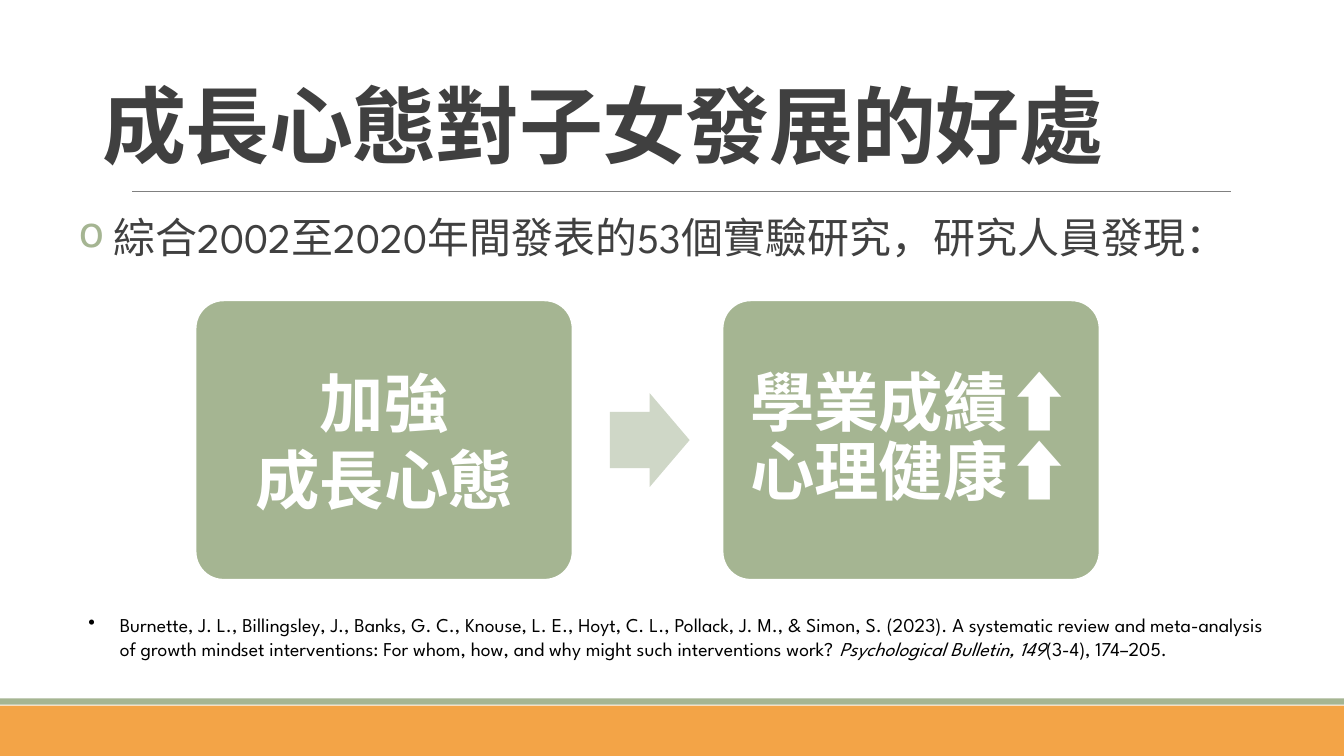
from dataclasses import dataclass

from lxml.etree import SubElement
from pptx import Presentation
from pptx.dml.color import RGBColor
from pptx.enum.shapes import MSO_CONNECTOR, MSO_SHAPE
from pptx.enum.text import MSO_ANCHOR, PP_ALIGN
from pptx.oxml.ns import qn
from pptx.util import Cm, Pt


@dataclass(frozen=True)
class Theme:
    cjk: str = "Noto Sans CJK SC"
    latin: str = "League Spartan"
    ink: str = "404040"
    black: str = "000000"
    white: str = "FFFFFF"
    sage: str = "A5B592"
    pale: str = "CFD7C7"
    amber: str = "F3A447"
    gray: str = "808080"
    title: int = 60
    card: int = 46
    body: int = 30
    cite: int = 14


def hue(code):
    return RGBColor.from_string(code)


class Painter:
    def __init__(self, slide, theme):
        self.slide = slide
        self.theme = theme

    def shape(self, kind, box, fill, edge=None, bends=()):
        item = self.slide.shapes.add_shape(kind, *map(Cm, box))
        item.shadow.inherit = False
        item.fill.solid()
        item.fill.fore_color.rgb = hue(fill)
        if edge:
            item.line.color.rgb = hue(edge)
            item.line.width = Pt(1.25)
        else:
            item.line.fill.background()
        for index, bend in enumerate(bends):
            item.adjustments[index] = bend
        return item

    def rule(self, left, right, top):
        line = self.slide.shapes.add_connector(
            MSO_CONNECTOR.STRAIGHT, Cm(left), Cm(top), Cm(right), Cm(top))
        line.line.color.rgb = hue(self.theme.gray)
        line.line.width = Pt(0.5)
        SubElement(line._element.spPr, qn("a:effectLst"))

    def style(self, run, size, color, font, bold=False):
        run.font.size = Pt(size)
        run.font.bold = bold
        run.font.color.rgb = hue(color)
        run.font.name = font
        props = run._r.get_or_add_rPr()
        SubElement(props, qn("a:ea"), typeface=self.theme.cjk)

    def bullet(self, para, mark, color, indent):
        props = para._p.get_or_add_pPr()
        props.set("marL", str(Cm(indent)))
        props.set("indent", str(-Cm(indent)))
        tint = SubElement(props, qn("a:buClr"))
        SubElement(tint, qn("a:srgbClr"), val=color)
        SubElement(props, qn("a:buChar"), char=mark)

    def text(self, box, parts, size, color, bold=False):
        frame = self.slide.shapes.add_textbox(*map(Cm, box)).text_frame
        frame.word_wrap = True
        para = frame.paragraphs[0]
        for words, font in parts:
            run = para.add_run()
            run.text = words
            self.style(run, size, color, font, bold)
        return frame

    def card(self, left, words, pitch):
        theme = self.theme
        item = self.shape(MSO_SHAPE.ROUNDED_RECTANGLE, (left, 7.57, 9.5, 7.04),
                          theme.sage, theme.white, (0.1,))
        frame = item.text_frame
        frame.word_wrap = True
        frame.vertical_anchor = MSO_ANCHOR.MIDDLE
        frame.margin_left = frame.margin_right = Cm(0.46)
        frame.margin_top = frame.margin_bottom = Cm(0.46)
        frame.text = words
        for para in frame.paragraphs:
            para.alignment = PP_ALIGN.CENTER
            para.line_spacing = pitch
            for run in para.runs:
                self.style(run, theme.card, theme.white, theme.cjk, True)


def main():
    deck = Presentation()
    deck.slide_width, deck.slide_height = Cm(33.87), Cm(19.05)
    theme = Theme()
    pen = Painter(deck.slides.add_slide(deck.slide_layouts[6]), theme)

    pen.shape(MSO_SHAPE.RECTANGLE, (0, 17.78, 33.87, 1.27), theme.amber)
    pen.shape(MSO_SHAPE.RECTANGLE, (0, 17.6, 33.87, 0.16), theme.sage)
    pen.rule(3.33, 31.01, 4.83)

    title = pen.text((2.34, 0.84, 29.21, 3.68),
                     [("成長心態對子女發展的好處", theme.cjk)],
                     theme.title, theme.ink, True)
    title.vertical_anchor = MSO_ANCHOR.BOTTOM
    title.paragraphs[0].line_spacing = 0.85
    title.paragraphs[0].runs[0]._r.get_or_add_rPr().set("spc", "-50")

    body = pen.text((1.98, 5.36, 30.18, 1.8),
                    [(" ", theme.cjk),
                     ("綜合2002至2020年間發表的53個實驗研究，研究人員發現：", theme.latin)],
                    theme.body, theme.ink)
    body.margin_left = body.margin_right = 0
    pen.bullet(body.paragraphs[0], "o", theme.sage, 0.25)
    body.paragraphs[0].line_spacing = 0.9

    cite = pen.text((1.98, 15.32, 30.51, 2.06),
                    [("Burnette, J. L., Billingsley, J., Banks, G. C., Knouse, L. E., "
                      "Hoyt, C. L., Pollack, J. M., & Simon, S. (2023). A systematic "
                      "review and meta-analysis of growth mindset interventions: For "
                      "whom, how, and why might such interventions work? ", theme.latin),
                     ("Psychological Bulletin, 149", theme.latin),
                     ("(3-4), 174–205.", theme.latin)],
                    theme.cite, theme.black)
    pen.bullet(cite.paragraphs[0], "•", theme.black, 0.79)
    cite.paragraphs[0].runs[1].font.italic = True

    pen.card(4.93, "加強\n成長心態", 1.0)
    pen.shape(MSO_SHAPE.RIGHT_ARROW, (15.37, 9.91, 2.01, 2.36), theme.pale,
              bends=(0.6, 0.5))
    pen.card(18.21, "學業成績⬆心理健康⬆", 0.9)

    deck.save("out.pptx")


if __name__ == "__main__":
    main()
